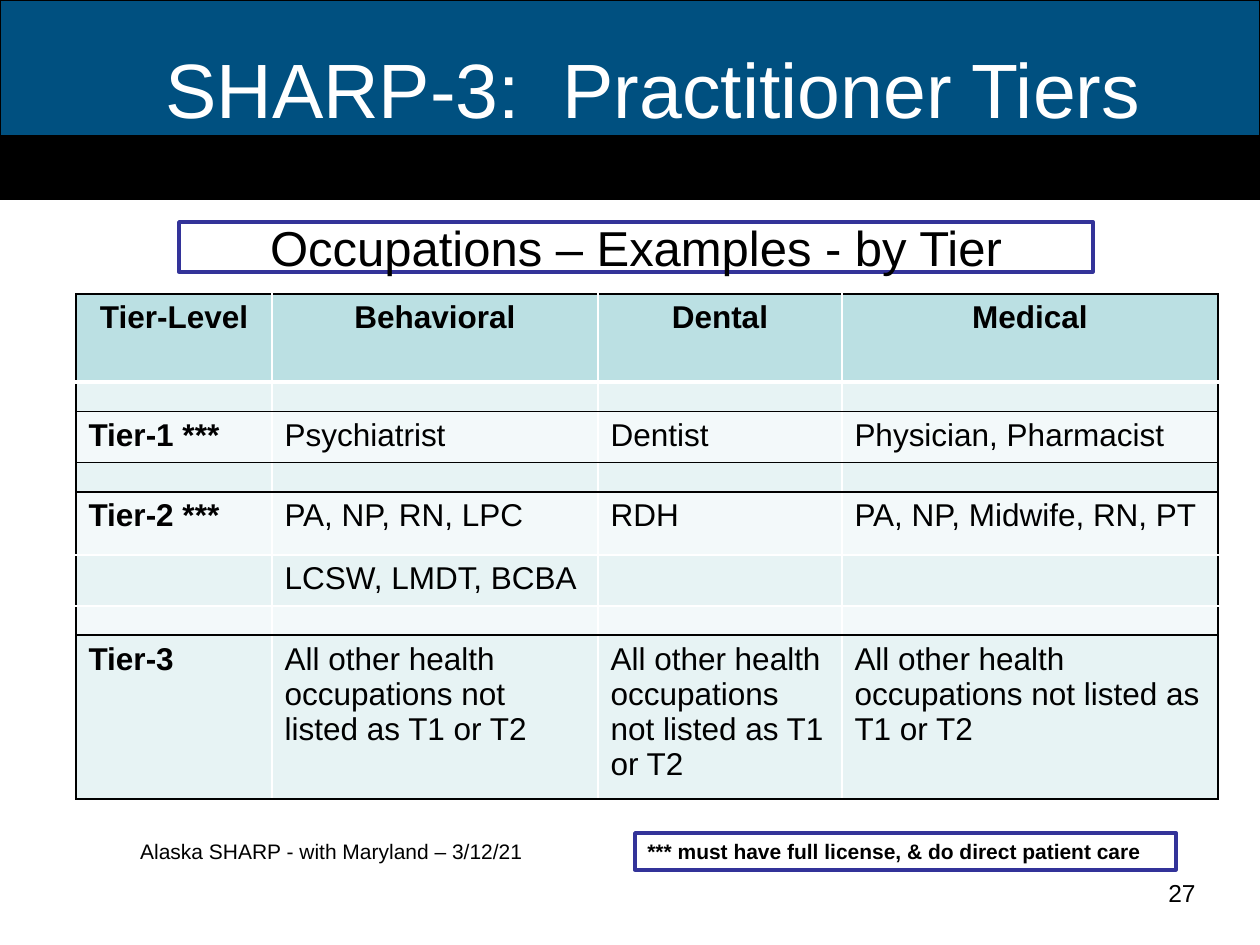
from dataclasses import dataclass

from lxml import etree
from pptx import Presentation
from pptx.dml.color import RGBColor
from pptx.enum.shapes import MSO_SHAPE
from pptx.enum.text import MSO_ANCHOR, PP_ALIGN
from pptx.oxml.ns import qn
from pptx.util import Pt

RECT = MSO_SHAPE.RECTANGLE
TOP, MIDDLE = MSO_ANCHOR.TOP, MSO_ANCHOR.MIDDLE
LEFT, CENTER, RIGHT = PP_ALIGN.LEFT, PP_ALIGN.CENTER, PP_ALIGN.RIGHT
SCALE = 914400 / 126


@dataclass(frozen=True)
class Theme:
    face: str = "Arial"
    black: str = "000000"
    white: str = "FFFFFF"
    blue: str = "005080"
    frame: str = "333399"
    head: str = "BBE0E3"
    bands: tuple = ("E7F3F4", "F3F9FA")
    title: int = 44
    sub: int = 28
    body: int = 18
    page: int = 14
    small: int = 12
    gap: int = 8


THEME = Theme()
OTHER = "All other health occupations not listed as T1 or T2"
ROWS = [
    ("Tier-Level", "Behavioral", "Dental", "Medical"),
    ("", "", "", ""),
    ("Tier-1 ***", "Psychiatrist", "Dentist", "Physician, Pharmacist"),
    ("", "", "", ""),
    ("Tier-2 ***", "PA, NP, RN, LPC", "RDH", "PA, NP, Midwife, RN, PT"),
    ("", "LCSW, LMDT, BCBA", "", ""),
    ("", "", "", ""),
    ("Tier-3", OTHER, OTHER, OTHER),
]
WIDTHS = (196, 326, 244, 376)
HEIGHTS = (88, 29, 51, 29, 63, 51, 29, 164)
# Colour and weight of each line across the table, top to bottom
DARK, LIGHT = (THEME.black, 1), (THEME.white, 1)
ACROSS = (DARK, (THEME.white, 3), DARK, DARK, DARK, LIGHT, LIGHT, DARK, DARK)
DOWN = (DARK, LIGHT, LIGHT, LIGHT, DARK)


def px(num):
    return round(num * SCALE)


def rgb(code):
    return RGBColor.from_string(code)


def write(frame, text, size, color=THEME.black, align=LEFT, bold=False):
    para = frame.paragraphs[0]
    para.text = text
    para.alignment = align
    font = para.font
    font.name, font.size, font.bold = THEME.face, Pt(size), bold
    font.color.rgb = rgb(color)


def add_rect(slide, box, fill, line, weight):
    shape = slide.shapes.add_shape(RECT, *map(px, box))
    shape.shadow.inherit = False
    shape.fill.solid()
    shape.fill.fore_color.rgb = rgb(fill)
    shape.line.color.rgb = rgb(line)
    shape.line.width = Pt(weight)
    return shape


def add_frame(slide, box, text, size, **style):
    shape = add_rect(slide, box, THEME.white, THEME.frame, 2)
    frame = shape.text_frame
    frame.word_wrap = True
    frame.vertical_anchor = MIDDLE
    write(frame, text, size, **style)


def add_text(slide, box, text, size, inset=6, **style):
    frame = slide.shapes.add_textbox(*map(px, box)).text_frame
    frame.word_wrap = True
    frame.vertical_anchor = TOP
    frame.margin_top = px(inset)
    write(frame, text, size, **style)


def set_edge(cell, side, color, weight):
    props = cell._tc.get_or_add_tcPr()
    line = etree.SubElement(props, qn(f"a:ln{side}"), w=str(Pt(weight)))
    fill = etree.SubElement(line, qn("a:solidFill"))
    etree.SubElement(fill, qn("a:srgbClr"), val=color)


def fill_cell(cell, row, col, text):
    edges = (DOWN[col], DOWN[col + 1], ACROSS[row], ACROSS[row + 1])
    for side, edge in zip("LRTB", edges):
        set_edge(cell, side, *edge)
    cell.fill.solid()
    color = THEME.bands[(row - 1) % 2] if row else THEME.head
    cell.fill.fore_color.rgb = rgb(color)
    if text:
        write(cell.text_frame, text, THEME.body,
              align=LEFT if row else CENTER, bold=row == 0 or col == 0)
    else:
        # An empty cell takes its line height from the end mark
        para = cell.text_frame.paragraphs[0]._p
        etree.SubElement(para, qn("a:endParaRPr"), sz=str(THEME.gap * 100))


def add_tiers(slide, left, top):
    size = (left, top, sum(WIDTHS), sum(HEIGHTS))
    table = slide.shapes.add_table(
        len(ROWS), len(WIDTHS), *map(px, size)).table
    for col, width in zip(table.columns, WIDTHS):
        col.width = px(width)
    for row, height in zip(table.rows, HEIGHTS):
        row.height = px(height)
    for row, texts in enumerate(ROWS):
        for col, text in enumerate(texts):
            fill_cell(table.cell(row, col), row, col, text)


def main():
    deck = Presentation()
    deck.slide_width, deck.slide_height = px(1260), px(945)
    slide = deck.slides.add_slide(deck.slide_layouts[6])

    add_rect(slide, (0, 0, 1260, 199), THEME.blue, THEME.black, 0.75)
    add_rect(slide, (0, 136, 1260, 63), THEME.black, THEME.black, 0.75)
    add_text(slide, (126, 28, 1055, 94), "SHARP-3:  Practitioner Tiers",
             THEME.title, inset=14, color=THEME.white, align=CENTER)
    add_tiers(slide, 76, 294)
    add_text(slide, (72, 833, 519, 43),
             "Alaska SHARP - with Maryland – 3/12/21",
             THEME.small, align=CENTER)
    add_text(slide, (1124, 872, 84, 44), "27", THEME.page, align=RIGHT)
    add_frame(slide, (179, 222, 914, 50), "Occupations – Examples - by Tier",
              THEME.sub, align=CENTER)
    add_frame(slide, (635, 833, 541, 37),
              "*** must have full license, & do direct patient care",
              THEME.small, bold=True)
    deck.save("out.pptx")


if __name__ == "__main__":
    main()
